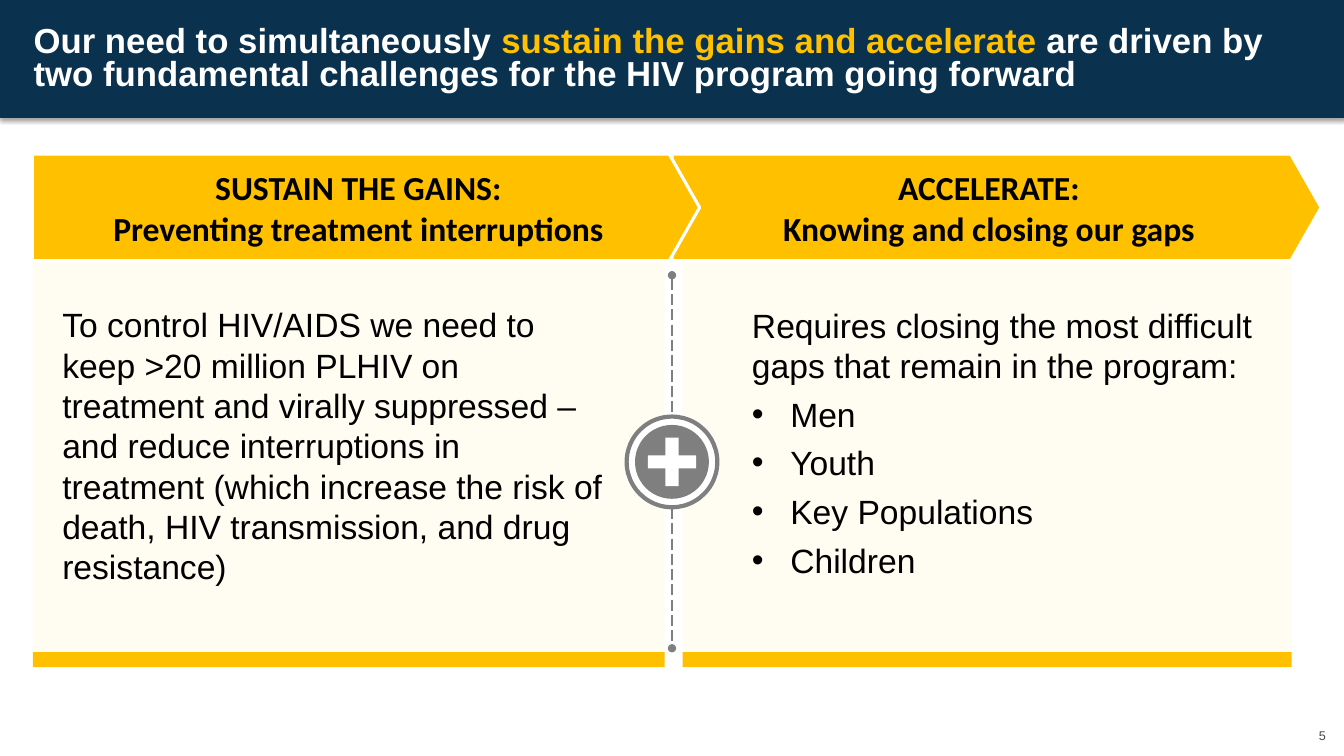
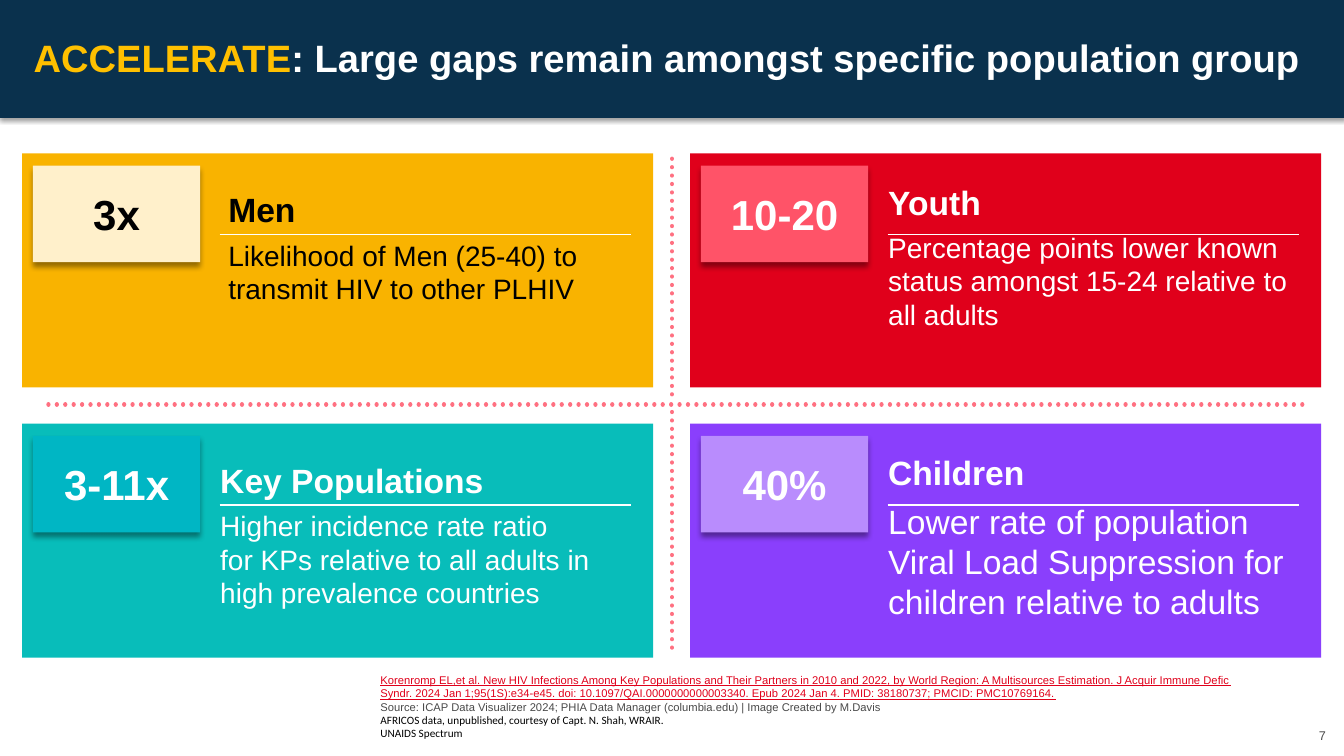
import dataclasses

import lxml.etree
import pptx
import pptx.dml.color
import pptx.enum.dml
import pptx.enum.shapes
import pptx.enum.text
import pptx.oxml.ns
import pptx.util

FORM = pptx.enum.shapes.MSO_SHAPE
DASH = pptx.enum.dml.MSO_LINE
SIDE = pptx.enum.text.PP_ALIGN
HOLD = pptx.enum.text.MSO_ANCHOR


@dataclasses.dataclass(frozen=True)
class Theme:
    # Colours
    navy: str = "0A314D"
    gold: str = "FFC000"
    cream: str = "FFFCF2"
    white: str = "FFFFFF"
    black: str = "000000"
    gray: str = "7F7F7F"
    slate: str = "494949"
    red: str = "E0001B"
    rose: str = "FF7081"
    # Fonts and type sizes
    sans: str = "Arial"
    alt: str = "Calibri"
    stat: float = 30
    head: float = 24
    text: float = 20
    page: float = 9
    note: float = 8


THEME = Theme()


def tint(code):
    return pptx.dml.color.RGBColor.from_string(code)


def node(root, tag, **attrs):
    """Add a drawing element with the given attributes."""
    item = lxml.etree.SubElement(root, pptx.oxml.ns.qn("a:" + tag))
    for key, value in attrs.items():
        item.set(key, str(value))
    return item


def put(frame, text, size=THEME.head, ink=THEME.black, font=THEME.sans,
        bold=False, under=False, side=SIDE.LEFT, lead=None, gap=0, dot=False):
    """Add a paragraph; *stars* mark gold words, a newline breaks the line."""
    para = frame.paragraphs[0]
    first = not para.runs
    if not first:
        para = frame.add_paragraph()
    # Bullet or plain paragraph
    props = para._p.get_or_add_pPr()
    dent = pptx.util.Inches(0.38) if dot else 0
    props.set("marL", str(dent))
    props.set("indent", str(-dent))
    if dot:
        node(node(props, "buClr"), "srgbClr", val=ink)
        node(props, "buFont", typeface=THEME.sans)
        node(props, "buChar", char="•")
    else:
        node(props, "buNone")
    para.alignment = side
    para.space_before = pptx.util.Pt(0 if first else gap)
    para.space_after = pptx.util.Pt(gap)
    if lead:
        para.line_spacing = lead
    # Runs
    for turn, part in enumerate(text.split("*")):
        for row, words in enumerate(part.split("\n")):
            if row:
                para.add_line_break()
            if not words:
                continue
            run = para.add_run()
            run.text = words
            run.font.name = font
            run.font.size = pptx.util.Pt(size)
            run.font.bold = bold
            run.font.underline = under
            run.font.color.rgb = tint(THEME.gold if turn % 2 else ink)


class Deck:
    """Style and current slide; lengths are percent of the slide's size."""

    def __init__(self):
        self.show = pptx.Presentation()
        self.show.slide_width = pptx.util.Inches(13.33)
        self.show.slide_height = pptx.util.Inches(7.5)
        self.slide = None

    def across(self, share):
        return round(self.show.slide_width * share / 100)

    def down(self, share):
        return round(self.show.slide_height * share / 100)

    def area(self, x, y, wide, high):
        return self.across(x), self.down(y), self.across(wide), self.down(high)

    def page(self, title, size, lead, number):
        """Start a slide with its band, title and page number."""
        layout = self.show.slide_layouts[1]
        self.slide = self.show.slides.add_slide(layout)
        self.shape(0, 0, 100, 15.6, THEME.navy, shade=(35, 3.1, 1.8))
        frame = self.holder(0, 2.5, 2.3, 95.85, 11.3, HOLD.MIDDLE)
        put(frame, title, size=size, ink=THEME.white, bold=True, lead=lead)
        frame = self.text(94.6, 94.7, 4.8, 5.3, HOLD.MIDDLE)
        put(frame, number, size=THEME.page, ink=THEME.slate, side=SIDE.RIGHT)

    def holder(self, index, x, y, wide, high, hold=HOLD.TOP, inset=0):
        """Place a template placeholder in front of what is drawn so far."""
        item = self.slide.placeholders[index]
        item.left, item.top, item.width, item.height = self.area(
            x, y, wide, high)
        self.slide.shapes._spTree.append(item._element)
        frame = item.text_frame
        frame.margin_left = frame.margin_right = pptx.util.Inches(inset)
        frame.margin_top = frame.margin_bottom = pptx.util.Inches(inset / 2)
        return self.setup(frame, hold)

    def setup(self, frame, hold):
        frame.word_wrap = True
        frame.auto_size = pptx.enum.text.MSO_AUTO_SIZE.NONE
        frame.vertical_anchor = hold
        return frame

    def text(self, x, y, wide, high, hold=HOLD.TOP):
        box = self.slide.shapes.add_textbox(*self.area(x, y, wide, high))
        return self.setup(box.text_frame, hold)

    def shape(self, x, y, wide, high, fill, form=FORM.RECTANGLE, edge=None,
              weight=0, turn=None, shade=None):
        item = self.slide.shapes.add_shape(form, *self.area(x, y, wide, high))
        item.shadow.inherit = False
        item.fill.solid()
        item.fill.fore_color.rgb = tint(fill)
        if edge:
            item.line.color.rgb = tint(edge)
            item.line.width = pptx.util.Pt(weight)
        else:
            item.line.fill.background()
        if turn is not None:
            item.adjustments[0] = turn
        if shade:
            alpha, blur, drop = shade
            list_ = item._element.spPr.find(pptx.oxml.ns.qn("a:effectLst"))
            cast = node(list_, "outerShdw", blurRad=pptx.util.Pt(blur),
                        dist=pptx.util.Pt(drop), dir=5400000,
                        algn="t", rotWithShape=0)
            ink = node(cast, "srgbClr", val=THEME.black)
            node(ink, "alpha", val=alpha * 1000)
        return self.setup(item.text_frame, HOLD.MIDDLE)

    def badge(self, x, y, size, fill, **style):
        """Draw a shape as wide as high around a centre."""
        high = size * self.show.slide_width / self.show.slide_height
        self.shape(x - size / 2, y - high / 2, size, high, fill, **style)

    def line(self, x, y, end_x, end_y, ink, weight, dash=None, ends=None):
        item = self.slide.shapes.add_connector(
            pptx.enum.shapes.MSO_CONNECTOR.STRAIGHT,
            self.across(x), self.down(y), self.across(end_x), self.down(end_y))
        item.line.color.rgb = tint(ink)
        item.line.width = pptx.util.Pt(weight)
        stroke = item.line._get_or_add_ln()
        if dash:
            item.line.dash_style = dash
        if dash == DASH.ROUND_DOT:
            stroke.set("cap", "rnd")
        if ends:
            node(stroke, "headEnd", type=ends)
            node(stroke, "tailEnd", type=ends)
        node(item._element.spPr, "effectLst")

    def card(self, x, y, fill, chip, ink, stat, head, text, size, nudge):
        """Draw a group's card: figure, heading, rule and description."""
        self.shape(x, y, 46.95, 30.95, fill)
        frame = self.shape(x + 0.8, y + 1.6, 12.45, 12.8, chip,
                           shade=(40, 4, 3))
        put(frame, stat, size=THEME.stat, ink=ink, bold=True, side=SIDE.CENTER)
        shift, drop = nudge
        frame = self.text(x + 14 + shift, y + drop, 32.1, 24)
        put(frame, head, ink=ink, bold=True, gap=3)
        put(frame, text, size=size, ink=ink, gap=3)
        self.line(x + 14.7, y + 10.75, x + 45.3, y + 10.75, THEME.white, 0.75)


def drive(deck):
    """Two challenges side by side."""
    deck.page("Our need to simultaneously *sustain the gains and accelerate* "
              "are driven by two fundamental challenges for the HIV program "
              "going forward", 24.8, 0.8, "5")
    # Panels with a bar at the foot
    for x, wide in ((2.45, 47), (50.8, 45.3)):
        deck.shape(x, 28, wide, 58.25, THEME.cream)
        deck.shape(x, 86.25, wide, 2, THEME.gold)
    # Heading arrows, the left one in front
    heads = ((50, 48.3, "ACCELERATE:\nKnowing and closing our gaps"),
             (2.4, 49.65,
              "SUSTAIN THE GAINS:\nPreventing treatment interruptions"))
    for x, wide, text in heads:
        frame = deck.shape(x, 20.4, wide, 14.1, THEME.gold, form=FORM.PENTAGON,
                           edge=THEME.white, weight=2.25, turn=0.284)
        put(frame, text, font=THEME.alt, bold=True, side=SIDE.CENTER)
    # Body text
    frame = deck.text(3.9, 39.6, 42.15, 39.1)
    put(frame, "To control HIV/AIDS we need to keep >20 million PLHIV on "
        "treatment and virally suppressed – and reduce interruptions in "
        "treatment (which increase the risk of death, HIV transmission, "
        "and drug resistance)")
    frame = deck.holder(1, 55.2, 39.6, 40.95, 38.1, inset=0.1)
    put(frame, "Requires closing the most difficult gaps that remain in the "
        "program:", gap=3)
    for group in ("Men", "Youth", "Key Populations", "Children"):
        put(frame, group, gap=3, dot=True)
    # Divider and plus sign
    deck.line(50, 36.4, 50, 85.75, THEME.gray, 1, DASH.LONG_DASH, "oval")
    deck.badge(50, 61.1, 6.75, THEME.white, form=FORM.OVAL,
               edge=THEME.gray, weight=3)
    deck.badge(50, 61.1, 5.5, THEME.gray, form=FORM.OVAL)
    deck.badge(50, 61.1, 3.6, THEME.white, form=FORM.CROSS, turn=0.365)


def gaps(deck):
    """Four population groups."""
    deck.page("*ACCELERATE*: Large gaps remain amongst specific population "
              "group", 27.2, 0.9, "7")
    # Cards: fill, chip, ink, figure, heading, text, size, text offset
    cards = (
        ("F9B300", "FFF0CB", THEME.black, "3x", "Men",
         "Likelihood of Men (25-40) to transmit HIV to other PLHIV",
         THEME.text, (0.6, 4.1)),
        (THEME.red, "FF5368", THEME.white, "10-20", "Youth",
         "Percentage points lower known status amongst 15-24 relative to "
         "all adults", THEME.text, (0, 3.05)),
        ("08BDBA", "00B6C4", THEME.white, "3-11x", "Key Populations",
         "Higher incidence rate ratio\nfor KPs relative to all adults in "
         "high prevalence countries", THEME.text, (0, 4.1)),
        ("8A3FFC", "B98CFD", THEME.white, "40%", "Children",
         "Lower rate of population\nViral Load Suppression for children "
         "relative to adults", THEME.head, (0, 3.05)),
    )
    for spot, card in enumerate(cards):
        row, col = divmod(spot, 2)
        deck.card(1.65 + 49.7 * col, 20.3 + 35.75 * row, *card)
    # Dotted cross
    for ends in ((50, 21, 50, 53.2), (96.9, 53.5, 3.15, 53.5),
                 (50, 54.5, 50, 86.7)):
        deck.line(*ends, THEME.rose, 3, DASH.ROUND_DOT)
    # Sources
    frame = deck.holder(1, 28.3, 88.6, 63.45, 9.3, HOLD.BOTTOM)
    put(frame, "Korenromp EL,et al. New HIV Infections Among Key Populations "
        "and Their Partners in 2010 and 2022, by World Region: A Multisources "
        "Estimation. J Acquir Immune Defic Syndr. 2024 Jan 1;95(1S):e34-e45. "
        "doi: 10.1097/QAI.0000000000003340. Epub 2024 Jan 4. PMID: 38180737; "
        "PMCID: PMC10769164.", size=THEME.note, ink=THEME.red, under=True)
    put(frame, "Source: ICAP Data Visualizer 2024; PHIA Data Manager "
        "(columbia.edu) | Image Created by M.Davis",
        size=THEME.note, ink=THEME.slate)
    for text in ("AFRICOS data, unpublished, courtesy of Capt. N. Shah, WRAIR.",
                 "UNAIDS Spectrum"):
        put(frame, text, size=THEME.note, font=THEME.alt)


def main():
    deck = Deck()
    drive(deck)
    gaps(deck)
    deck.show.save("out.pptx")


if __name__ == "__main__":
    main()
